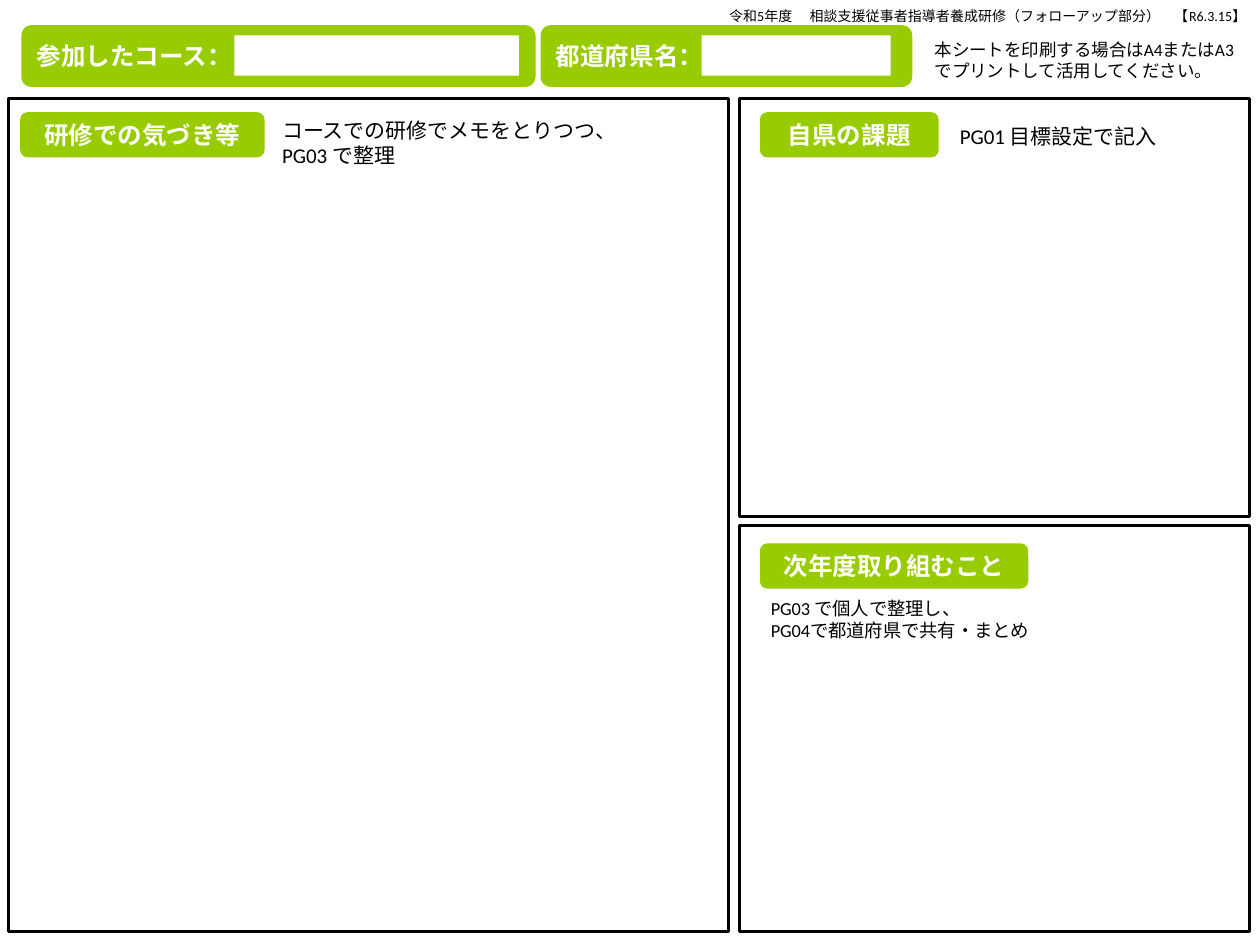
from pptx import Presentation
from pptx.dml.color import RGBColor
from pptx.enum import shapes, text
from pptx.util import Pt

GREEN = RGBColor(0x99, 0xCC, 0x00)
WHITE = RGBColor(0xFF, 0xFF, 0xFF)
BLACK = RGBColor(0x00, 0x00, 0x00)
FONT = "Calibri"
LEFT, CENTER, RIGHT = text.PP_ALIGN.LEFT, text.PP_ALIGN.CENTER, text.PP_ALIGN.RIGHT
RECT, ROUNDED = shapes.MSO_SHAPE.RECTANGLE, shapes.MSO_SHAPE.ROUNDED_RECTANGLE

LEFT_X, RIGHT_X = 5, 422.6
LEFT_W, RIGHT_W = 411.1, 291.6
PANEL_TOP, PANEL_BOTTOM = 56.2, 532.1
SPLIT_TOP, SPLIT_BOTTOM = 295.2, 300.2
BAR_TOP, BAR_H = 14.4, 35.3
FIELD_TOP, FIELD_H = 20.2, 23
HEADING_H = 25.9

PANELS = [
    (LEFT_X, PANEL_TOP, LEFT_W, PANEL_BOTTOM),
    (RIGHT_X, PANEL_TOP, RIGHT_W, SPLIT_TOP),
    (RIGHT_X, SPLIT_BOTTOM, RIGHT_W, PANEL_BOTTOM),
]
HEADINGS = [
    ("研修での気づき等", 11.5, 64.1, 139.7),
    ("自県の課題", 434.2, 64.1, 102.2),
    ("次年度取り組むこと", 434.2, 310.5, 153.4),
]
ENTRY_BARS = [
    ("参加したコース：", 12.2, 293.8, 133.9, 162.7),
    ("都道府県名：", 308.9, 212.4, 401, 108),
]
NOTES = [
    (["令和5年度 \u3000相談支援従事者指導者養成研修（フォローアップ部分）\u3000【R6.3.15】".replace("\u3000", "　")],
     (320.4, 0.7, 398.9, 26.6), 8, RIGHT),
    (["PG01 目標設定で記入"], (541.4, 67, 139.7, 21.6), 12, LEFT),
    (["コースでの研修でメモをとりつつ、", "PG03 で整理"], (154.1, 63.4, 255.6, 36), 12, LEFT),
    (["PG03 で個人で整理し、", "PG04で都道府県で共有・まとめ"], (433.4, 337.7, 170.6, 32.4), 10.5, LEFT),
    (["本シートを印刷する場合はA4またはA3でプリントして活用してください。"],
     (527, 18.7, 186.5, 31.7), 10, LEFT),
]


def write(frame, lines, size, color, align, bold=False):
    frame.word_wrap = True
    for number, line in enumerate(lines):
        paragraph = frame.paragraphs[0] if number == 0 else frame.add_paragraph()
        paragraph.alignment = align
        run = paragraph.add_run()
        run.text = line
        run.font.name = FONT
        run.font.size = Pt(size)
        run.font.bold = bold
        run.font.color.rgb = color


def add_box(slide, kind, box, fill=None):
    shape = slide.shapes.add_shape(kind, *map(Pt, box))
    shape.shadow.inherit = False
    if fill is None:
        shape.fill.background()
        shape.line.color.rgb = BLACK
        shape.line.width = Pt(1.75)
    else:
        shape.fill.solid()
        shape.fill.fore_color.rgb = fill
        shape.line.fill.background()
    return shape


def add_label(slide, label, box, align):
    frame = add_box(slide, ROUNDED, box, GREEN).text_frame
    frame.vertical_anchor = text.MSO_ANCHOR.MIDDLE
    write(frame, [label], 14, WHITE, align, bold=True)


def main():
    deck = Presentation()
    deck.slide_width, deck.slide_height = Pt(720), Pt(540)
    sheet = deck.slides.add_slide(deck.slide_layouts[6])

    for left, top, width, bottom in PANELS:
        add_box(sheet, RECT, (left, top, width, bottom - top))

    for heading, left, top, width in HEADINGS:
        add_label(sheet, heading, (left, top, width, HEADING_H), CENTER)

    for label, left, width, field_left, field_width in ENTRY_BARS:
        add_label(sheet, label, (left, BAR_TOP, width, BAR_H), LEFT)
        add_box(sheet, RECT, (field_left, FIELD_TOP, field_width, FIELD_H), WHITE)

    for lines, box, size, align in NOTES:
        note = sheet.shapes.add_textbox(*map(Pt, box)).text_frame
        note.auto_size = text.MSO_AUTO_SIZE.SHAPE_TO_FIT_TEXT
        write(note, lines, size, BLACK, align)

    deck.save("out.pptx")


if __name__ == "__main__":
    main()
